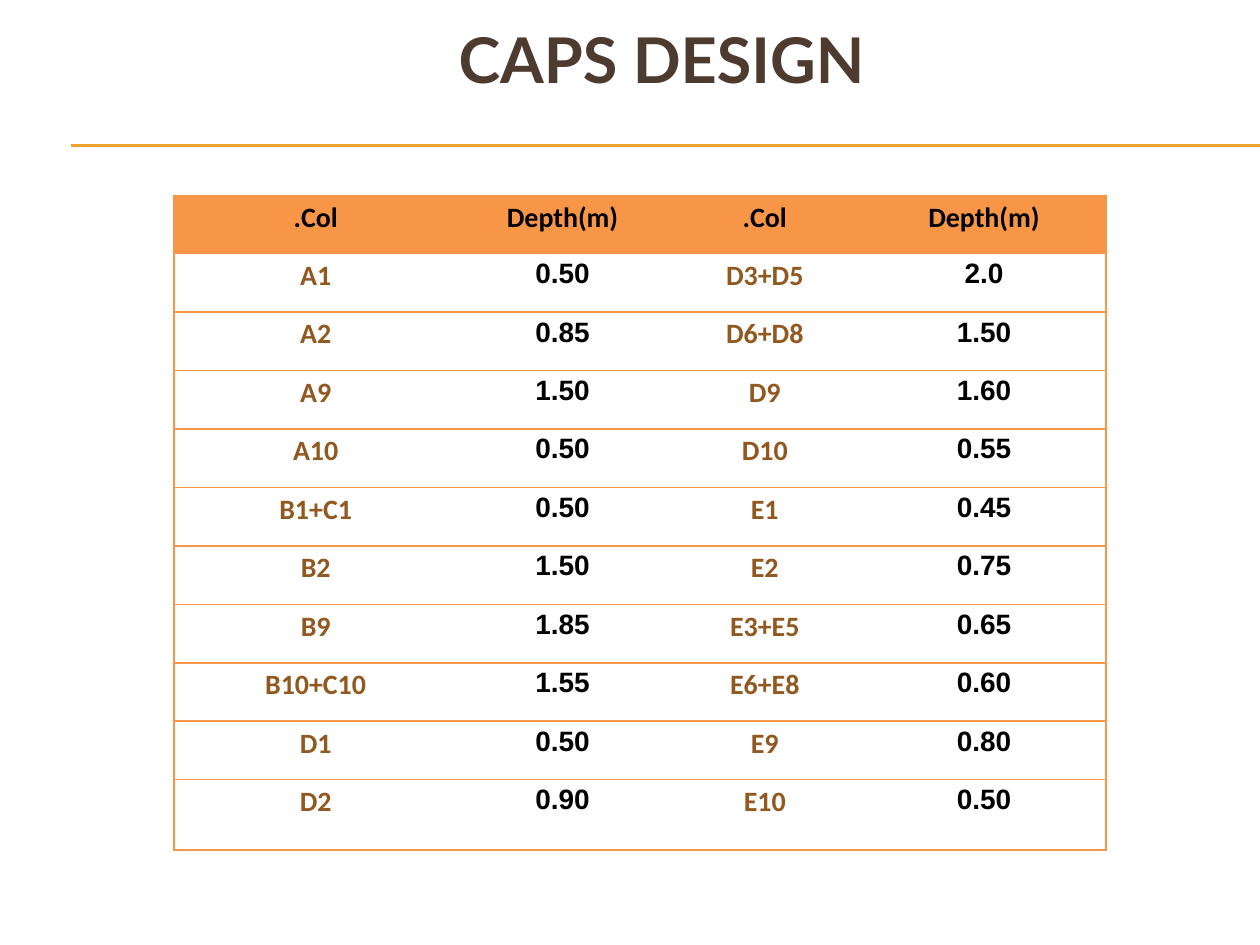
from pptx import Presentation, util as u
from pptx.dml.color import RGBColor
from pptx.enum import shapes, text
from pptx.oxml import ns
from lxml import etree

TITLE = "CAPS DESIGN"
HEADER = ("Col.", "Depth(m)") * 2
LEFT = [("A1", "0.50"), ("A2", "0.85"), ("A9", "1.50"), ("A10", "0.50"), ("B1+C1", "0.50"),
        ("B2", "1.50"), ("B9", "1.85"), ("B10+C10", "1.55"), ("D1", "0.50"), ("D2", "0.90")]
RIGHT = [("D3+D5", "2.0"), ("D6+D8", "1.50"), ("D9", "1.60"), ("D10", "0.55"), ("E1", "0.45"),
         ("E2", "0.75"), ("E3+E5", "0.65"), ("E6+E8", "0.60"), ("E9", "0.80"), ("E10", "0.50")]
ROWS = [HEADER] + [a + b for a, b in zip(LEFT, RIGHT)]
COL_WIDTHS = (2.25, 1.67, 1.54, 1.94)
ROW_HEIGHTS = [0.464] * 10 + [0.56]
RULES = (1.15, 1.16)

BROWN = RGBColor(0x4E, 0x3B, 0x30)
GOLD = RGBColor(0xF0, 0xA2, 0x2E)
ORANGE = RGBColor(0xF7, 0x96, 0x46)
TAN = RGBColor(0x91, 0x58, 0x1F)
BLACK = RGBColor(0, 0, 0)
NO_STYLE = "{2D5ABB26-0587-4C30-8999-92F81FD0307C}"


def write(tf, words, font, size, color, complex_font):
    p = tf.paragraphs[0]
    p.alignment = text.PP_ALIGN.CENTER
    p._p.get_or_add_pPr().set("rtl", "1")
    r = p.add_run()
    r.text = words
    r.font.name, r.font.size, r.font.bold = font, u.Pt(size), True
    r.font.color.rgb = color
    cs = etree.SubElement(r._r.get_or_add_rPr(), ns.qn("a:cs"))
    cs.set("typeface", complex_font)
    return p


def add_border(cell, side):
    ln = etree.SubElement(cell._tc.get_or_add_tcPr(), ns.qn(f"a:ln{side}"), w=str(u.Pt(1)))
    fill = etree.SubElement(ln, ns.qn("a:solidFill"))
    etree.SubElement(fill, ns.qn("a:srgbClr"), val=str(ORANGE))


def add_rule(slide, y, right):
    sp = slide.shapes.add_connector(shapes.MSO_CONNECTOR.STRAIGHT,
                                    u.Inches(0.56), u.Inches(y), right, u.Inches(y))
    sp.line.color.rgb = GOLD
    sp.line.width = u.Pt(0.75)
    etree.SubElement(sp._element.spPr, ns.qn("a:effectLst"))


def add_depth_table(slide):
    frame = slide.shapes.add_table(len(ROWS), len(COL_WIDTHS), u.Inches(1.38), u.Inches(1.55),
                                   u.Inches(sum(COL_WIDTHS)), u.Inches(sum(ROW_HEIGHTS)))
    table = frame.table
    table._tbl.tblPr.find(ns.qn("a:tableStyleId")).text = NO_STYLE
    for col, width in zip(table.columns, COL_WIDTHS):
        col.width = u.Inches(width)
    for i, (row, height, values) in enumerate(zip(table.rows, ROW_HEIGHTS, ROWS)):
        row.height = u.Inches(height)
        for j, (cell, value) in enumerate(zip(row.cells, values)):
            cell.margin_left = cell.margin_right = u.Inches(0.07)
            cell.margin_top = cell.margin_bottom = 0
            is_label = i > 0 and j % 2 == 0
            is_depth = i > 0 and j % 2 == 1
            p = write(cell.text_frame, value, "Calibri", 16, TAN if is_label else BLACK,
                      "Arial" if is_depth else "Calibri")
            p.line_spacing = 1.15
            for side in ("L" if j == 0 else "") + ("R" if j == len(values) - 1 else "") + "TB":
                add_border(cell, side)
            if i == 0:
                cell.fill.solid()
                cell.fill.fore_color.rgb = ORANGE
            else:
                cell.fill.background()


def main():
    """Build the caps design slide."""
    prs = Presentation()
    prs.slide_width, prs.slide_height = u.Inches(10), u.Inches(7.5)
    slide = prs.slides.add_slide(prs.slide_layouts[5])
    for y in RULES:
        add_rule(slide, y, prs.slide_width)
    title = slide.shapes.title
    title.left, title.top, title.width, title.height = map(u.Inches, (0.5, 0, 9.5, 0.92))
    title.text_frame.vertical_anchor = text.MSO_ANCHOR.MIDDLE
    write(title.text_frame, TITLE, "Lato", 36, BROWN, "Lato")
    add_depth_table(slide)
    prs.save("out.pptx")


if __name__ == "__main__":
    main()
